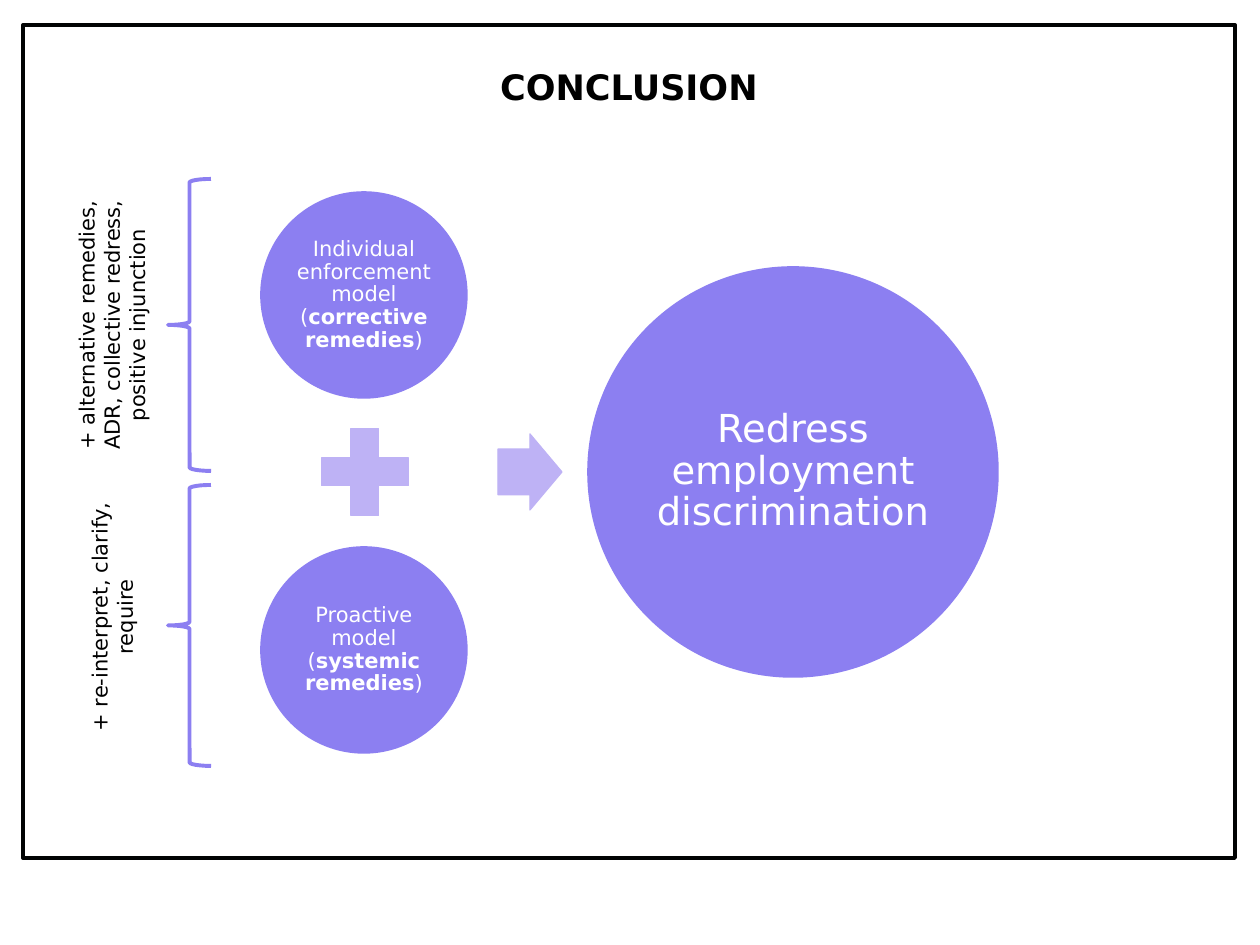
import math
import pptx
import pptx.util
import pptx.dml.color
import pptx.enum.shapes
import pptx.enum.text

KIND = pptx.enum.shapes.MSO_SHAPE
ALIGN = pptx.enum.text.PP_ALIGN
ANCHOR = pptx.enum.text.MSO_ANCHOR

THEME = {
    "font": "DejaVu Sans",
    "ink": "000000", "frame": "010303", "white": "FFFFFF",
    "main": "8C7FF1", "soft": "BEB2F5",
    "title": 20, "body": 12, "goal": 22,
    "thick": 2.25, "edge": 2, "thin": 0.75,
}
SCALE = 914400 // 126  # EMU in one px
PAGE = (1260, 945)
FRAME = (23, 25, 1212, 833)

# Each run: words, bold
TITLE = [("CONCLUSION", True)]
# Circles: centre x, centre y, diameter, size, inset, runs
CIRCLES = [
    (364, 295, 204, "body", 3,
     [("Individual enforcement model (", False),
      ("corrective remedies", True), (")", False)]),
    (364, 650, 204, "body", 3,
     [("Proactive model (", False),
      ("systemic remedies", True), (")", False)]),
    (793, 472, 408, "goal", 4,
     [("Redress employment discrimination", False)]),
]
# Signs: kind, centre x, centre y, width, height, adjustments
SIGNS = [
    (KIND.MATH_PLUS, 365, 472, 118, 118, []),
    (KIND.RIGHT_ARROW, 530, 472, 64, 76, [0.6, 0.5]),
]
# Braces: top, height, label centre y, label height, label
BRACES = [
    (179, 292, 325, 89,
     "+ alternative remedies, ADR, collective redress, positive injunction"),
    (485, 281, 617, 63, "+ re-interpret, clarify, require"),
]
BRACE_X, BRACE_W = 168, 43
LABEL_X, LABEL_W = 112, 292


def color(name):
    return pptx.dml.color.RGBColor.from_string(THEME[name])


def emu(*sizes):
    return [round(size * SCALE) for size in sizes]


def around(x, y, w, h):
    """Turn a centre and a size into left, top, width, height."""
    return x - w / 2, y - h / 2, w, h


def draw(slide, kind, box, line, width, fill=None, adjust=()):
    shape = slide.shapes.add_shape(kind, *emu(*box))
    shape.shadow.inherit = False
    if fill:
        shape.fill.solid()
        shape.fill.fore_color.rgb = color(fill)
    else:
        shape.fill.background()
    shape.line.color.rgb = color(line)
    shape.line.width = pptx.util.Pt(THEME[width])
    for place, value in enumerate(adjust):
        shape.adjustments[place] = value


def write(slide, box, runs, size, ink, inset=None, spacing=None,
          anchor=ANCHOR.MIDDLE, turn=0):
    shape = slide.shapes.add_textbox(*emu(*box))
    shape.rotation = turn
    frame = shape.text_frame
    form = {"word_wrap": True, "vertical_anchor": anchor}
    if inset is not None:
        for side in ("left", "top", "right", "bottom"):
            form["margin_" + side] = emu(inset)[0]
    for name, value in form.items():
        setattr(frame, name, value)
    para = frame.paragraphs[0]
    para.alignment = ALIGN.CENTER
    para.line_spacing = spacing
    for words, bold in runs:
        run = para.add_run()
        run.text = words
        look = {"name": THEME["font"], "bold": bold,
                "size": pptx.util.Pt(THEME[size])}
        for name, value in look.items():
            setattr(run.font, name, value)
        run.font.color.rgb = color(ink)


def main():
    deck = pptx.Presentation()
    deck.slide_width, deck.slide_height = emu(*PAGE)
    slide = deck.slides.add_slide(deck.slide_layouts[6])

    draw(slide, KIND.RECTANGLE, FRAME, "frame", "thick")
    write(slide, (54, 49, 1150, 76), TITLE, "title", "ink")

    for x, y, wide, size, inset, runs in CIRCLES:
        draw(slide, KIND.OVAL, around(x, y, wide, wide),
             "main", "edge", "main")
        inner = wide / math.sqrt(2)  # the square inside the circle
        write(slide, around(x, y, inner, inner), runs, size, "white",
              inset, 0.9)

    for kind, x, y, wide, high, adjust in SIGNS:
        draw(slide, kind, around(x, y, wide, high),
             "soft", "thin", "soft", adjust)

    for top, high, mid, deep, label in BRACES:
        draw(slide, KIND.LEFT_BRACE, (BRACE_X, top, BRACE_W, high),
             "main", "thick")
        write(slide, around(LABEL_X, mid, LABEL_W, deep),
              [(label, False)], "body", "ink", anchor=ANCHOR.TOP, turn=270)

    deck.save("out.pptx")


if __name__ == "__main__":
    main()
